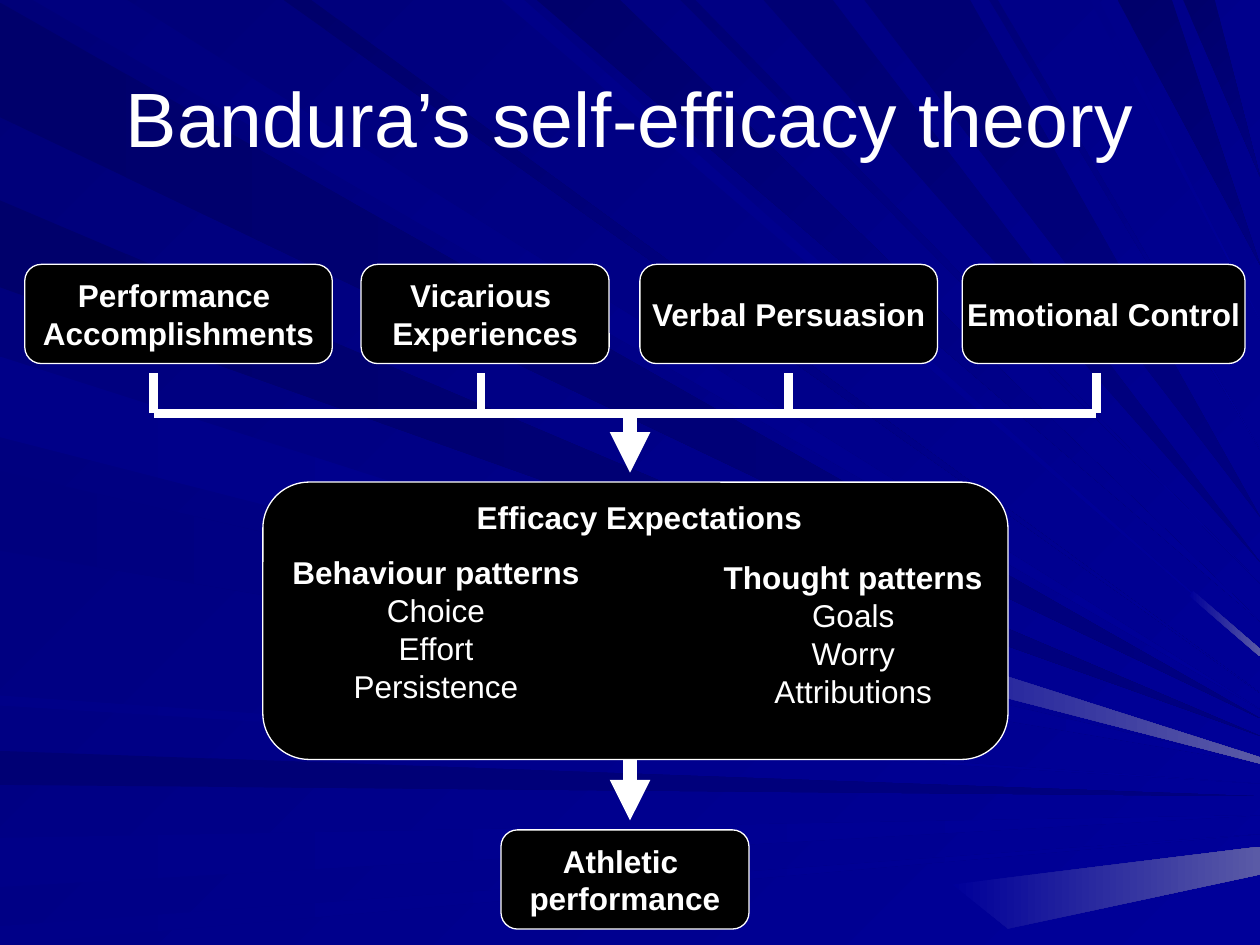
"""Build the slide on Bandura's self-efficacy theory over a field of blue rays."""
from dataclasses import dataclass

from lxml.etree import SubElement
from pptx import Presentation
from pptx.dml.color import RGBColor
from pptx.enum.shapes import MSO_CONNECTOR, MSO_SHAPE
from pptx.enum.text import MSO_ANCHOR, MSO_AUTO_SIZE, PP_ALIGN
from pptx.oxml.ns import qn
from pptx.util import Cm, Pt


@dataclass(frozen=True)
class Theme:
    font: str = "Arial"
    ink: RGBColor = RGBColor.from_string("FFFFFF")
    card: RGBColor = RGBColor.from_string("000000")
    title: Pt = Pt(44)
    body: Pt = Pt(18)
    outline: Pt = Pt(0.75)
    bracket: Pt = Pt(5)
    arrow: Pt = Pt(7.75)
    night: str = "000078"
    deep: str = "00006B"
    dusk: str = "000074"
    dim: str = "00007E"
    soft: str = "000088"
    mid: str = "000080"
    bright: str = "000099"
    haze: str = "5A5AA6"


def paint(fill, start, end, angle):
    fill.gradient()
    fill.gradient_angle = angle
    for stop, colour in zip(fill.gradient_stops, (start, end)):
        stop.color.rgb = RGBColor.from_string(colour)


def write(frame, paragraphs, size, bold):
    for index, text in enumerate(paragraphs):
        para = frame.add_paragraph() if index else frame.paragraphs[0]
        para.text = text
        para.alignment = PP_ALIGN.CENTER
        para.font.name, para.font.size, para.font.bold = theme.font, size, bold
        para.font.color.rgb = theme.ink


theme = Theme()
deck = Presentation()
deck.slide_width, deck.slide_height = Cm(25.4), Cm(19.05)
page = deck.slides.add_slide(deck.slide_layouts[6])
paint(page.background.fill, theme.night, theme.bright, 315)

left_rays = [
    (2, 93, 570, theme.deep, theme.mid),
    (596, 623, 632, theme.dusk, theme.mid),
    (665, 704, 647, theme.soft, theme.bright),
    (735, 750, 662, theme.soft, theme.bright),
    (159, 228, 584, theme.deep, theme.mid),
    (283, 347, 603, theme.soft, theme.bright),
    (374, 437, 606, theme.dim, theme.bright),
    (552, 560, 622, theme.soft, theme.bright),
]
top_rays = [
    (26, 101, 563, theme.dim, theme.bright),
    (398, 416, 518, theme.soft, theme.bright),
    (426, 492, 493, theme.deep, theme.bright),
    (540, 552, 463, theme.dusk, theme.bright),
    (606, 661, 446, theme.dusk, theme.mid),
    (887, 930, 210, theme.deep, theme.mid),
    (939, 964, 140, theme.deep, theme.mid),
    (225, 247, 550, theme.deep, theme.bright),
    (686, 770, 410, theme.dusk, theme.mid),
    (785, 792, 357, theme.night, theme.bright),
    (865, 872, 254, theme.soft, theme.bright),
]
edge = 1000
rays = [([(0, near), (0, far), (edge, tip)], start, end, 0)
        for near, far, tip, start, end in left_rays]
rays += [([(near, 0), (far, 0), (edge, tip)], start, end, 315)
         for near, far, tip, start, end in top_rays]
glints = [
    [(633, 511), (637, 485), (edge, 601), (edge, 606)],
    [(756, 702), (edge, 672), (edge, 694), (800, 737)],
    [(944, 473), (947, 469), (edge, 515), (edge, 521)],
]
rays += [(points, theme.bright, theme.haze, 0) for points in glints]
for points, start, end, angle in rays:
    outline = page.shapes.build_freeform(*points[0], scale=Cm(0.0254))
    outline.add_line_segments(points[1:], close=True)
    ray = outline.convert_to_shape()
    ray.shadow.inherit = False
    ray.line.fill.background()
    paint(ray.fill, start, end, angle)

title = page.shapes.add_textbox(Cm(1.27), Cm(0.76), Cm(22.86), Cm(3.18))
title.text_frame.word_wrap = True
title.text_frame.vertical_anchor = MSO_ANCHOR.MIDDLE
write(title.text_frame, ["Bandura’s self-efficacy theory"], theme.title, False)

source_top, card_height = 5.33, 2
cards = [
    (0.5, source_top, 6.2, card_height, ["Performance ", "Accomplishments"]),
    (7.28, source_top, 5, card_height, ["Vicarious \vExperiences"]),
    (12.9, source_top, 6, card_height, ["Verbal Persuasion"]),
    (19.4, source_top, 5.7, card_height, ["Emotional Control"]),
    (5.3, 9.72, 15.02, 5.59, []),
    (10.1, 16.73, 5, card_height, ["Athletic \vperformance"]),
]
for left, top, width, height, paragraphs in cards:
    card = page.shapes.add_shape(
        MSO_SHAPE.FLOWCHART_ALTERNATE_PROCESS, Cm(left), Cm(top), Cm(width), Cm(height))
    card.shadow.inherit = False
    card.fill.solid()
    card.fill.fore_color.rgb = theme.card
    card.line.color.rgb = theme.ink
    card.line.width = theme.outline
    card.text_frame.word_wrap = False
    card.text_frame.vertical_anchor = MSO_ANCHOR.MIDDLE
    write(card.text_frame, paragraphs, theme.body, True)

expectations = [
    (8.89, 9.91, 8, 1.02, ["Efficacy Expectations"]),
    (5.49, 11.03, 6.6, 3.3, ["Behaviour patterns", "Choice", "Effort", "Persistence"]),
    (13.9, 11.13, 6.6, 3.3, ["Thought patterns", "Goals", "Worry", "Attributions"]),
]
for left, top, width, height, lines in expectations:
    box = page.shapes.add_textbox(Cm(left), Cm(top), Cm(width), Cm(height))
    box.text_frame.word_wrap = True
    box.text_frame.auto_size = MSO_AUTO_SIZE.SHAPE_TO_FIT_TEXT
    write(box.text_frame, ["\v".join(lines)], theme.body, True)
    for span in box.text_frame.paragraphs[0].runs[1:]:
        span.font.bold = False

stems = [3.1, 9.7, 15.9, 22.1]
rail, middle = 8.33, 12.7
links = [(stems[0], rail, stems[-1], rail, False)]
links += [(stem, rail, stem, 7.52, False) for stem in stems]
links += [(middle, top, middle, bottom, True) for top, bottom in ((rail, 9.53), (15.32, 16.54))]
for from_x, from_y, to_x, to_y, pointed in links:
    link = page.shapes.add_connector(
        MSO_CONNECTOR.STRAIGHT, Cm(from_x), Cm(from_y), Cm(to_x), Cm(to_y))
    link.line.color.rgb = theme.ink
    link.line.width = theme.arrow if pointed else theme.bracket
    if pointed:
        SubElement(link._element.spPr.find(qn("a:ln")), qn("a:tailEnd"), type="triangle")
    SubElement(link._element.spPr, qn("a:effectLst"))

deck.save("out.pptx")
